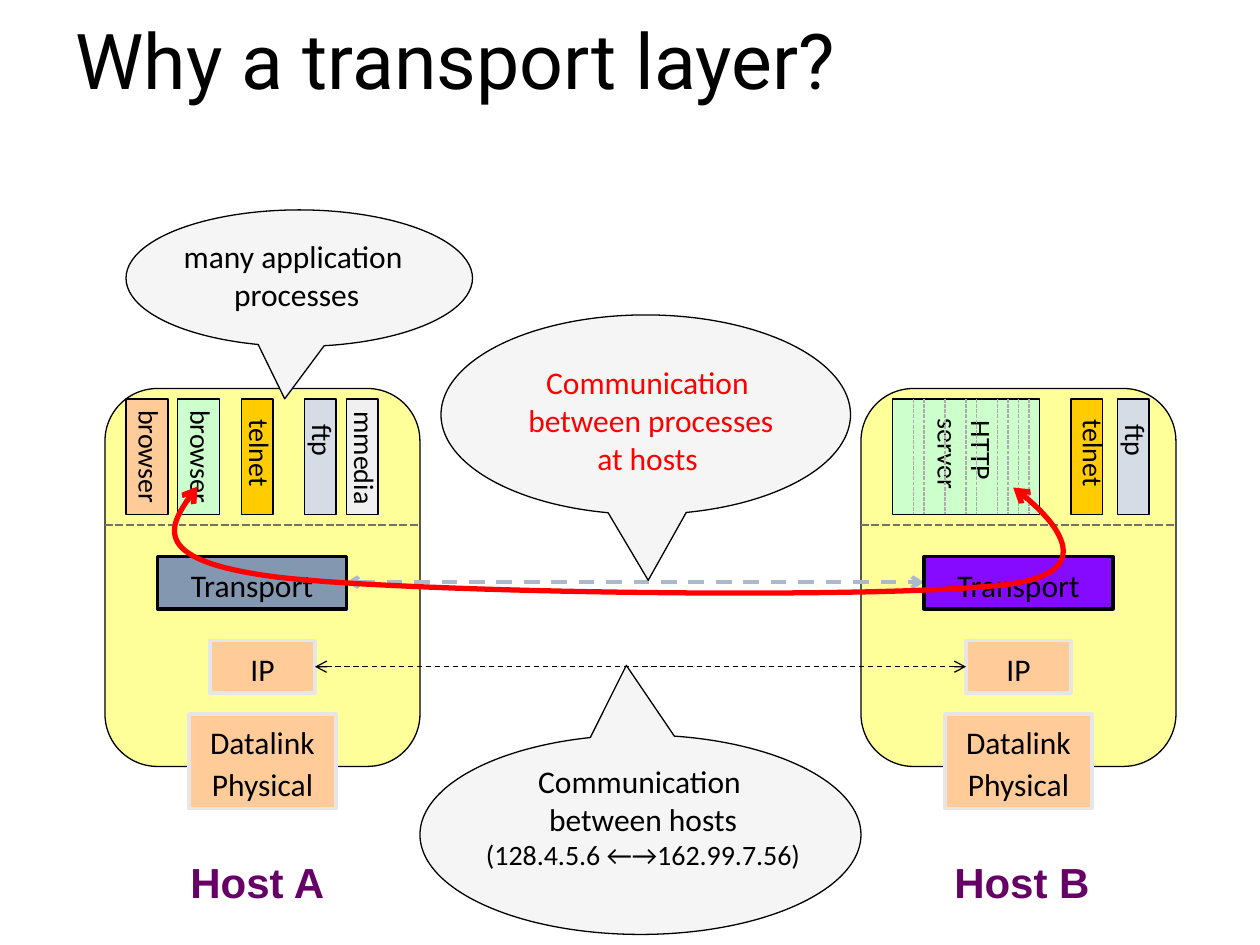
from dataclasses import dataclass

from lxml import etree
from pptx import Presentation
from pptx.dml.color import RGBColor
from pptx.enum.dml import MSO_LINE
from pptx.enum.shapes import MSO_CONNECTOR, MSO_SHAPE
from pptx.enum.text import MSO_ANCHOR, MSO_AUTO_SIZE, PP_ALIGN
from pptx.oxml.ns import qn
from pptx.util import Pt

RECT = MSO_SHAPE.RECTANGLE
ROUND = MSO_SHAPE.ROUNDED_RECTANGLE
CLOUD = MSO_SHAPE.OVAL_CALLOUT
LINE = MSO_CONNECTOR.STRAIGHT
DASH, SHORT = MSO_LINE.DASH, MSO_LINE.SQUARE_DOT
TOP, MIDDLE = MSO_ANCHOR.TOP, MSO_ANCHOR.MIDDLE
LEFT, CENTER = PP_ALIGN.LEFT, PP_ALIGN.CENTER
GROW, FIXED = MSO_AUTO_SIZE.SHAPE_TO_FIT_TEXT, MSO_AUTO_SIZE.NONE


@dataclass(frozen=True)
class Theme:
    """Colours, fonts and type sizes of the slide."""
    black: str = "000000"
    red: str = "FF0000"
    plum: str = "660066"
    yellow: str = "FFFF99"
    peach: str = "FFCC99"
    gold: str = "FFCC00"
    mint: str = "CCFFCC"
    steel: str = "D6DCE5"
    pale: str = "F1F0F0"
    cloud: str = "F5F5F5"
    frame: str = "E7E6E6"
    slate: str = "8497B0"
    violet: str = "850AFF"
    haze: str = "ADB9CA"
    dark: str = "767171"
    gray: str = "AFABAB"
    body: str = "Calibri"
    title: str = "Roboto"
    bold: str = "Arial"
    huge: int = 44
    large: int = 24
    mid: int = 18
    small: int = 16


T = Theme()


def apply(item, values):
    """Set each attribute in a dict of format values."""
    for name, value in values.items():
        setattr(item, name, value)


def write(shape, paras, size=T.mid, color=T.black, font=T.body, bold=False,
          align=CENTER, anchor=TOP, space=None, wrap=False, fit=GROW):
    """Fill a shape with paragraphs given as text or (text, size)."""
    frame = shape.text_frame
    apply(frame, {"word_wrap": wrap, "auto_size": fit,
                  "vertical_anchor": anchor})
    for i, entry in enumerate(paras):
        text, points = entry if isinstance(entry, tuple) else (entry, size)
        para = frame.add_paragraph() if i else frame.paragraphs[0]
        apply(para, {"text": text, "alignment": align, "line_spacing": space})
        for run in para.runs:
            apply(run.font, {"size": Pt(points), "name": font, "bold": bold})
            run.font.color.rgb = RGBColor.from_string(color)


def stroke(item, color, width, dash=None, arrows=False):
    """Style an outline, with open arrowheads at both ends on request."""
    item.line.color.rgb = RGBColor.from_string(color)
    apply(item.line, {"width": Pt(width), "dash_style": dash})
    if arrows:
        outline = item.element.spPr.find(qn("a:ln"))
        for end in ("a:headEnd", "a:tailEnd"):
            etree.SubElement(outline, qn(end), type="arrow")


def block(slide, kind, box, fill, edge=T.black, width=0.75):
    """Add a filled preset shape."""
    shape = slide.shapes.add_shape(kind, *map(Pt, box))
    shape.shadow.inherit = False
    shape.fill.solid()
    shape.fill.fore_color.rgb = RGBColor.from_string(fill)
    stroke(shape, edge, width)
    return shape


def label(slide, box, paras, turn=0, **style):
    """Add a text box."""
    shape = slide.shapes.add_textbox(*map(Pt, box))
    shape.rotation = turn
    write(shape, paras, **style)


def link(slide, ends, color, width, dash, arrows=False):
    """Add a straight line between two points."""
    item = slide.shapes.add_connector(LINE, *map(Pt, ends))
    stroke(item, color, width, dash, arrows)
    etree.SubElement(item.element.spPr, qn("a:effectLst"))


def layer(slide, box, paras, fill=T.peach, edge=T.frame):
    """Add a protocol layer box."""
    shape = block(slide, RECT, box, fill, edge, 2)
    write(shape, paras, anchor=MIDDLE, space=1.1, fit=FIXED)


def bubble(slide, box, tip, area, paras, color=T.black):
    """Add a callout with its text."""
    shape = block(slide, CLOUD, box, T.cloud)
    for i, value in enumerate(tip):
        shape.adjustments[i] = value
    label(slide, area, paras, color=color)


def task(slide, left, width, fill, text, size, shift=1.5):
    """Add a process bar with its sideways name, size being (long, mid)."""
    block(slide, RECT, (left, 228, width, 66), fill)
    span, mid = size
    high = 46 if "\v" in text else 26.6
    across = left + width / 2 + shift
    label(slide, (across - span / 2, mid - high / 2, span, high),
          [text], turn=90, size=T.small)


def host(slide, left, name, inset, tasks):
    """Add a host with its processes and lower layers."""
    label(slide, (left + inset, 486, 92, 36), [name], size=T.large,
          color=T.plum, font=T.bold, bold=True)
    block(slide, ROUND, (left, 222, 180, 216), T.yellow)
    layer(slide, (left + 48, 408, 84, 54), ["Datalink", "Physical"])
    link(slide, (left, 300, left + 180, 300), T.dark, 1.5, SHORT)
    for entry in tasks:
        task(slide, *entry)
    layer(slide, (left + 60, 366, 60, 30), ["IP"])


def bend(a, b, c, d, steps=32):
    """Return points along a cubic curve, without its start."""
    spots = []
    for i in range(1, steps + 1):
        t = i / steps
        u = 1 - t
        parts = (u ** 3, 3 * u * u * t, 3 * u * t * t, t ** 3)
        spots.append(tuple(
            Pt(sum(k * p[axis] for k, p in zip(parts, (a, b, c, d))))
            for axis in (0, 1)))
    return spots


def route(slide, knots, color, width):
    """Add an open curve through cubic knots with arrows at both ends."""
    pen = slide.shapes.build_freeform(*map(Pt, knots[0]))
    for i in range(0, len(knots) - 1, 3):
        pen.add_line_segments(bend(*knots[i:i + 4]), close=False)
    curve = pen.convert_to_shape()
    curve.shadow.inherit = False
    curve.fill.background()
    stroke(curve, color, width, arrows=True)


def main():
    """Build the slide and save it."""
    deck = Presentation()
    apply(deck, {"slide_width": Pt(720), "slide_height": Pt(540)})
    slide = deck.slides.add_slide(deck.slide_layouts[6])
    label(slide, (36, 9.4, 672, 92), ["Why a transport layer?"], size=T.huge,
          font=T.title, align=LEFT, space=0.9, wrap=True, fit=FIXED)
    browser, telnet, ftp = (77, 261), (57.6, 259), (35.3, 251.6)
    host(slide, 60, "Host A", 41, [
        (72, 24, T.peach, "browser", browser),
        (138, 18, T.gold, "telnet", telnet),
        (198, 18, T.pale, "mmedia", (76.3, 261.7)),
        (174, 18, T.steel, "ftp", ftp),
        (101.5, 24, T.mint, "browser", browser)])
    bubble(slide, (72, 120, 198, 78), (-0.042, 0.884), (78, 132, 179, 55),
           ["many application\v processes"])
    host(slide, 492, "Host B", 46, [
        (612, 18, T.gold, "telnet", telnet, 4),
        (638.6, 18, T.steel, "ftp", ftp),
        (510, 84, T.mint, "HTTP \vserver", (63.4, 259.2), -0.5)])
    for x in (522, 528, 540, 552, 558, 570, 576, 582, 588):
        link(slide, (x, 228, x, 294), T.gray, 0.75, SHORT)
    link(slide, (180, 381, 552, 381), T.black, 0.75, DASH, True)
    link(slide, (198, 332.7, 528, 332.7), T.haze, 2.25, DASH, True)
    for left, fill in ((90, T.slate), (528, T.violet)):
        layer(slide, (left, 318, 108, 30), ["Transport"], fill, T.black)
    bubble(slide, (240, 420, 252, 114), (-0.032, -0.849),
           (258, 432, 219, 70.6),
           ["Communication \vbetween hosts",
            ("(128.4.5.6 ←→162.99.7.56)", T.small)])
    bubble(slide, (252, 180, 234, 114), (0.006, 0.83), (273, 204, 194, 80),
           ["Communication\v between processes", "at hosts"], T.red)
    route(slide, [(113, 278), (97, 299), (81, 320), (158.4, 329.8),
                  (235.4, 339), (505.4, 342.7), (575.3, 334),
                  (645.8, 325.4), (579, 278.6), (579, 278.6)], T.red, 3)
    deck.save("out.pptx")


main()
